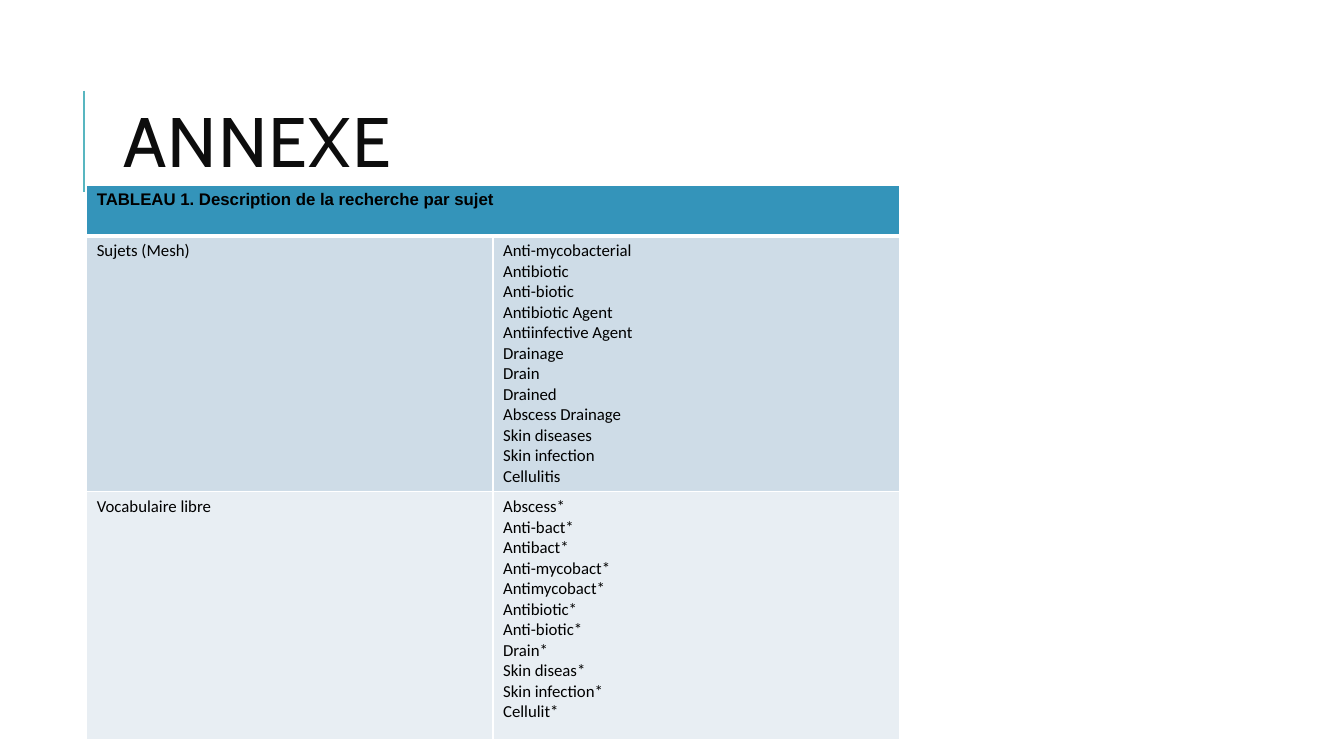
from dataclasses import dataclass

from lxml import etree
from pptx import Presentation
from pptx.dml.color import RGBColor
from pptx.enum.shapes import MSO_CONNECTOR
from pptx.enum.text import MSO_ANCHOR, MSO_AUTO_SIZE, PP_ALIGN
from pptx.oxml.ns import qn
from pptx.util import Inches, Pt

STRAIGHT = MSO_CONNECTOR.STRAIGHT
MIDDLE = MSO_ANCHOR.MIDDLE
NO_AUTOFIT = MSO_AUTO_SIZE.NONE
LEFT, JUSTIFY = PP_ALIGN.LEFT, PP_ALIGN.JUSTIFY


@dataclass(frozen=True)
class Theme:
    accent: str = "58B6C0"
    heading: str = "0D0D0D"
    body: str = "000000"
    header_fill: str = "3494BA"
    band_fills: tuple = ("CEDCE7", "E8EEF3")
    border: str = "FFFFFF"
    title_font: str = "Cabin"
    header_font: str = "Arial"
    body_font: str = "Calibri"
    title_size: int = 50
    body_size: int = 12


THEME = Theme()
HEADER = "TABLEAU 1. Description de la recherche par sujet"
BREAK = "\n"
SUBJECTS = [
    ("Sujets (Mesh)", [
        "Anti-mycobacterial ", "Antibiotic", "Anti-biotic", "Antibiotic Agent",
        "Antiinfective Agent", "Drainage", "Drain", "Drained",
        "Abscess Drainage", "Skin diseases", "Skin infection", "Cellulitis"]),
    ("Vocabulaire libre", [
        "Abscess*", "Anti-bact*", "Antibact*", "Anti-mycobact*",
        "Antimycobact*", "Antibiotic*", "Anti-biotic*",
        "Drain*" + BREAK + "Skin diseas*", "Skin infection*", "Cellulit*"]),
]
COLUMN_WIDTH = Inches(4.03)
ROW_HEIGHTS = [Inches(0.5), Inches(2.44), Inches(2.46)]


def add_run(paragraph, text, font, size, color, bold=False):
    run = paragraph.add_run()
    run.text = text
    run.font.name = font
    run.font.size = Pt(size)
    run.font.bold = bold
    run.font.color.rgb = RGBColor.from_string(color)
    return run


def style_cell(cell, fill, top=1, bottom=1):
    """Fill a cell and border it; top and bottom are widths in points."""
    properties = cell._tc.get_or_add_tcPr()
    for side, width in (("L", 1), ("R", 1), ("T", top), ("B", bottom)):
        line = etree.SubElement(properties, qn(f"a:ln{side}"), w=str(Pt(width)))
        solid = etree.SubElement(line, qn("a:solidFill"))
        etree.SubElement(solid, qn("a:srgbClr"), val=THEME.border)
    cell.fill.solid()
    cell.fill.fore_color.rgb = RGBColor.from_string(fill)


deck = Presentation()
deck.slide_width, deck.slide_height = Inches(13.33), Inches(7.5)
slide = deck.slides.add_slide(deck.slide_layouts[5])

# Accent rule and title
accent_rule = slide.shapes.add_connector(
    STRAIGHT, Inches(0.83), Inches(0.9), Inches(0.83), Inches(1.9))
accent_rule.line.color.rgb = RGBColor.from_string(THEME.accent)
accent_rule.line.width = Pt(1.5)
etree.SubElement(accent_rule._element.spPr, qn("a:effectLst"))

title = slide.shapes.title
title.left, title.top = Inches(1.12), Inches(0.64)
title.width, title.height = Inches(10.63), Inches(1.64)
title.text_frame.auto_size = NO_AUTOFIT
title.text_frame.vertical_anchor = MIDDLE
heading = title.text_frame.paragraphs[0]
heading.alignment = LEFT
heading.line_spacing = 0.8
heading_run = add_run(
    heading, "ANNEXE", THEME.title_font, THEME.title_size, THEME.heading)
heading_run.font._element.set("spc", "100")

# Search terms by subject
terms_table = slide.shapes.add_table(
    len(ROW_HEIGHTS), 2, Inches(0.86), Inches(1.84),
    2 * COLUMN_WIDTH, sum(ROW_HEIGHTS)).table
for column in terms_table.columns:
    column.width = COLUMN_WIDTH
for row, height in zip(terms_table.rows, ROW_HEIGHTS):
    row.height = height

header = terms_table.cell(0, 0)
header.merge(terms_table.cell(0, 1))
for cell in terms_table.rows[0].cells:
    style_cell(cell, THEME.header_fill, bottom=3)
add_run(header.text_frame.paragraphs[0], HEADER, THEME.header_font,
        THEME.body_size, THEME.body, bold=True)

for index, (subject, terms) in enumerate(SUBJECTS):
    subject_cell, terms_cell = terms_table.rows[index + 1].cells
    for cell in (subject_cell, terms_cell):
        style_cell(cell, THEME.band_fills[index], top=1 if index else 3)
    add_run(subject_cell.text_frame.paragraphs[0], subject,
            THEME.body_font, THEME.body_size, THEME.body)
    frame = terms_cell.text_frame
    for position, term in enumerate(terms):
        paragraph = frame.add_paragraph() if position else frame.paragraphs[0]
        paragraph.alignment = LEFT if BREAK in term else JUSTIFY
        for part, text in enumerate(term.split(BREAK)):
            if part:
                paragraph.add_line_break()
            add_run(paragraph, text, THEME.body_font, THEME.body_size, THEME.body)

deck.save("out.pptx")
